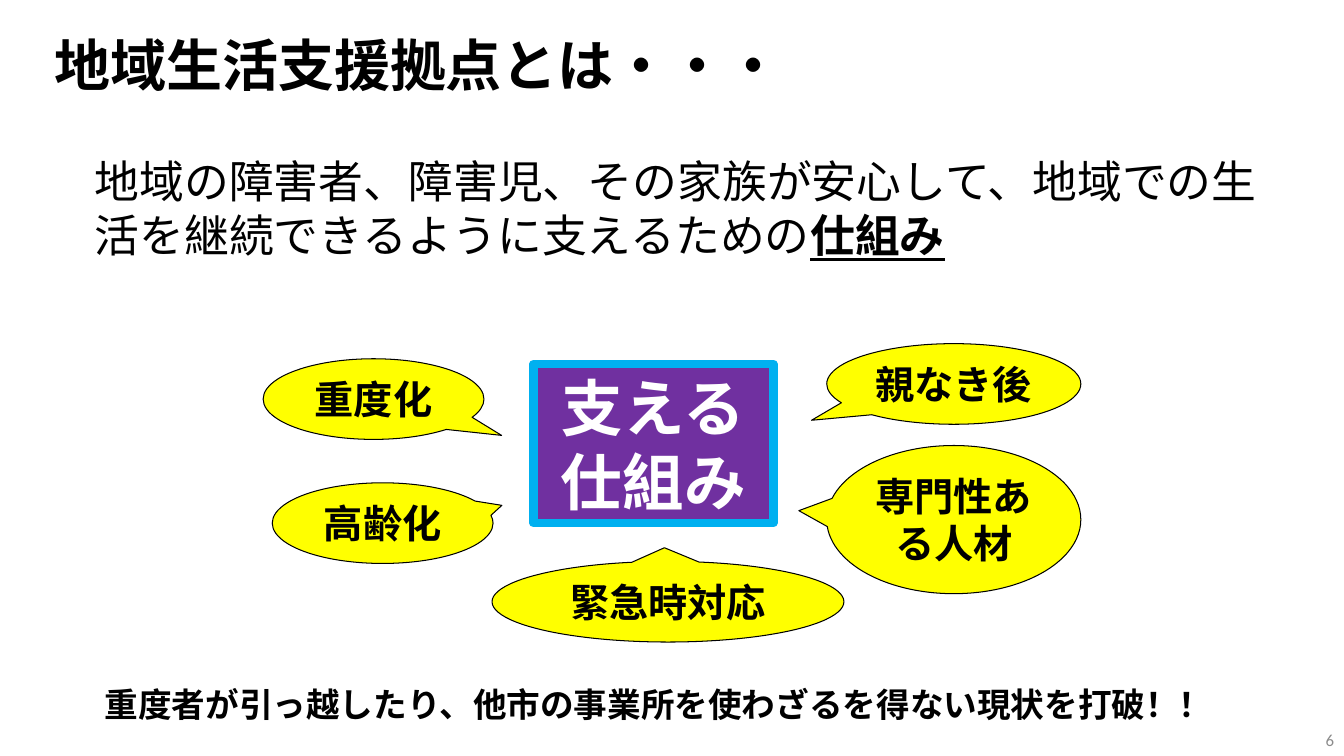
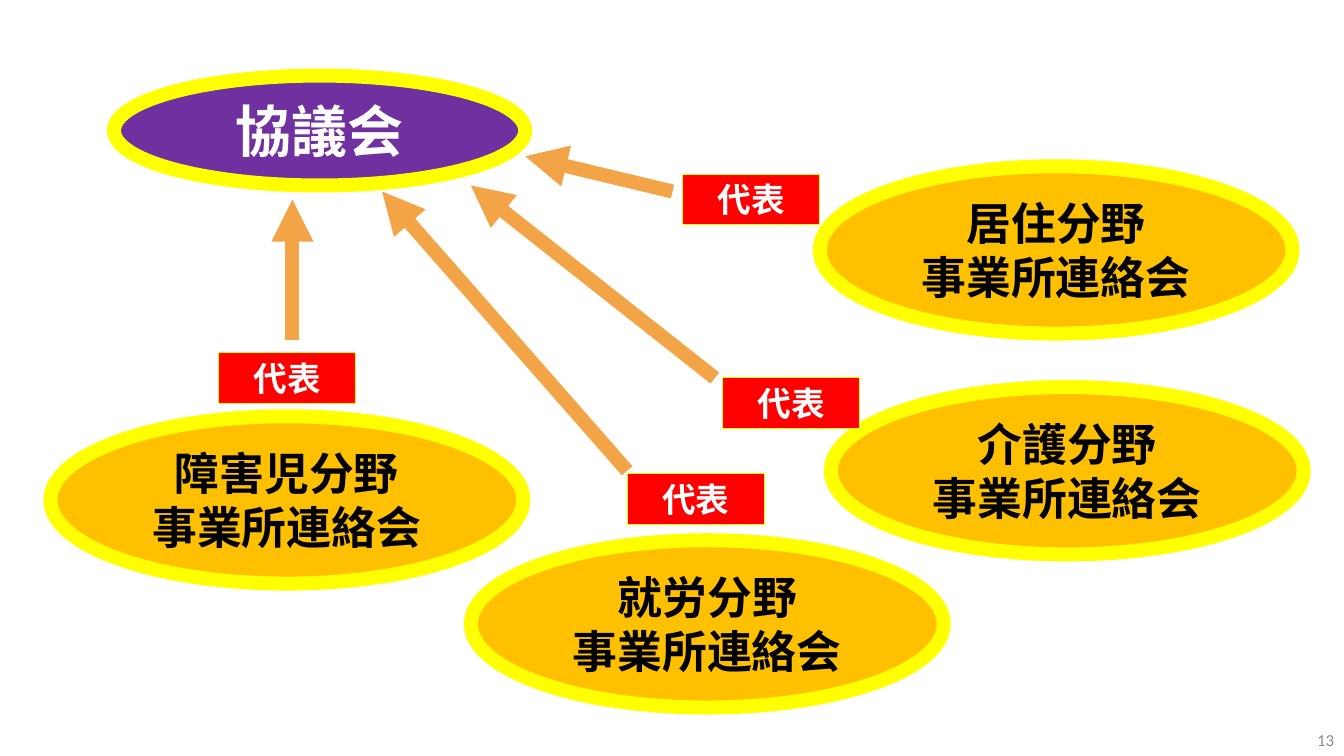
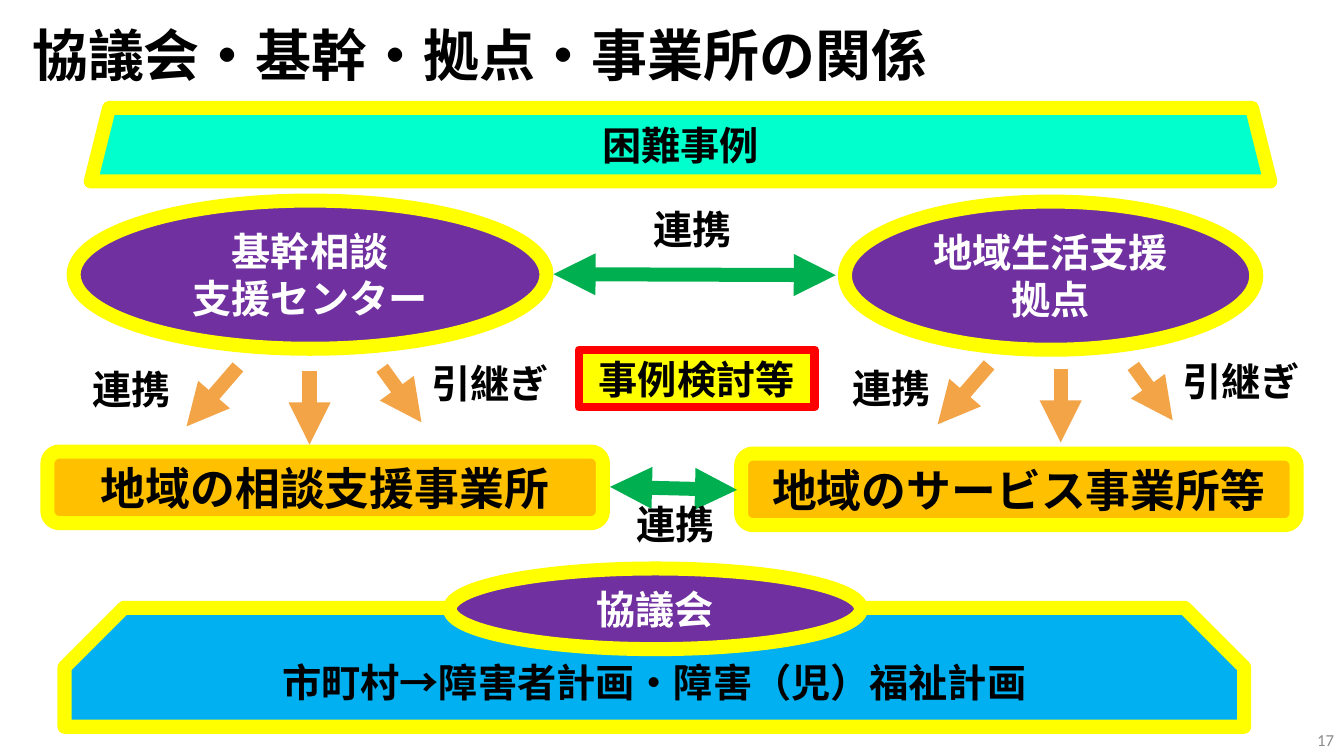
from dataclasses import dataclass
from typing import Optional

from lxml.etree import SubElement
from pptx import Presentation
from pptx.dml.color import RGBColor
from pptx.enum.shapes import MSO_CONNECTOR, MSO_SHAPE as Shape
from pptx.enum.text import MSO_ANCHOR as Anchor, PP_ALIGN as Align
from pptx.oxml.ns import qn
from pptx.util import Inches, Pt

BLACK = RGBColor(0x00, 0x00, 0x00)
WHITE = RGBColor(0xFF, 0xFF, 0xFF)
GREY = RGBColor(0x8C, 0x8C, 0x8C)
YELLOW = RGBColor(0xFF, 0xFF, 0x00)
AMBER = RGBColor(0xFF, 0xC0, 0x00)
ORANGE = RGBColor(0xF3, 0xA4, 0x47)
RED = RGBColor(0xFF, 0x00, 0x00)
PURPLE = RGBColor(0x70, 0x30, 0xA0)
BLUE = RGBColor(0x00, 0xB0, 0xF0)
AQUA = RGBColor(0x00, 0xFF, 0xCC)
GREEN = RGBColor(0x00, 0xB0, 0x50)

FONT = "Noto Sans CJK JP"
NUMBER_FONT = "Calibri"
THICK = 10


@dataclass(frozen=True)
class Box:
    left: float
    top: float
    width: float
    height: float

    def lengths(self) -> tuple:
        return tuple(Inches(v) for v in (self.left, self.top, self.width, self.height))


@dataclass(frozen=True)
class Style:
    kind: Shape
    fill: RGBColor
    line: RGBColor
    line_width: float
    size: int
    color: RGBColor = BLACK
    adjustments: tuple = ()


@dataclass(frozen=True)
class Arrow:
    x1: float
    y1: float
    x2: float
    y2: float

    def moved(self, dx: float, dy: float) -> "Arrow":
        return Arrow(self.x1 + dx, self.y1 + dy, self.x2 + dx, self.y2 + dy)


@dataclass(frozen=True)
class Callout:
    text: str
    box: Box
    pointer: tuple


@dataclass(frozen=True)
class Field:
    """A liaison group, the badge of its delegate and the delegate's arrow."""
    name: str
    left: float
    top: float
    badge_left: float
    badge_top: float
    arrow: Arrow


HUB = Style(Shape.OVAL, PURPLE, YELLOW, THICK, 28, WHITE)
MAIN_HUB = Style(Shape.OVAL, PURPLE, YELLOW, THICK, 40, WHITE)
GROUP = Style(Shape.OVAL, AMBER, YELLOW, THICK, 32)
OFFICE = Style(Shape.ROUNDED_RECTANGLE, AMBER, YELLOW, THICK, 32)
BADGE = Style(Shape.RECTANGLE, RED, YELLOW, 0.75, 24, WHITE)
CORE = Style(Shape.RECTANGLE, PURPLE, BLUE, 6, 44, WHITE)
REVIEW = Style(Shape.RECTANGLE, YELLOW, RED, 6, 28)
CASES = Style(Shape.TRAPEZOID, AQUA, YELLOW, THICK, 28)
PLAN = Style(Shape.SNIP_2_SAME_RECTANGLE, BLUE, YELLOW, THICK, 28, adjustments=(0.5, 0))

CALLOUTS = (
    Callout("重度化", Box(2.61, 3.56, 2.19, 0.8), (0.58, 0.45)),
    Callout("高齢化", Box(2.7, 4.79, 2.19, 0.8), (0.54, -0.22)),
    Callout("親なき後", Box(8.2, 3.41, 2.52, 0.8), (-0.56, 0.45)),
    Callout("専門性ある人材", Box(8.2, 4.42, 2.52, 1.47), (-0.61, -0.06)),
    Callout("緊急時対応", Box(4.88, 5.57, 3.49, 0.8), (-0.01, -0.67)),
)

FIELDS = (
    Field("障害児分野", 0.5, 4.13, 2.17, 3.5, Arrow(2.9, 3.37, 2.9, 1.98)),
    Field("就労分野", 4.67, 5.36, 6.22, 4.7, Arrow(6.22, 4.67, 3.79, 1.9)),
    Field("介護分野", 8.24, 3.84, 7.17, 3.75, Arrow(7.09, 3.75, 4.67, 1.84)),
    Field("居住分野", 8.13, 1.65, 6.77, 1.73, Arrow(6.67, 1.9, 5.21, 1.55)),
)

HANDOVER_ARROWS = (
    Arrow(2.36, 3.64, 1.85, 4.23),
    Arrow(3.07, 3.68, 3.07, 4.41),
    Arrow(3.79, 3.65, 4.18, 4.19),
)
HANDOVER_OFFSETS = ((0, 0), (7.45, -0.02))


def format_run(r, size: int, color: RGBColor, bold: bool, font: str = FONT) -> None:
    r.font.size = Pt(size)
    r.font.bold = bold
    r.font.color.rgb = color
    r.font.name = font
    SubElement(r._r.rPr, qn("a:ea")).set("typeface", font)


def write(s, text: str, size: int, color: RGBColor, bold: bool, align: Align,
          anchor: Anchor, font: str = FONT) -> None:
    tf = s.text_frame
    tf.word_wrap = True
    tf.vertical_anchor = anchor
    tf.text = text
    for p in tf.paragraphs:
        p.alignment = align
        for r in p.runs:
            format_run(r, size, color, bold, font)


def add_label(slide, text: str, box: Box, size: int = 28, bold: bool = True):
    s = slide.shapes.add_textbox(*box.lengths())
    write(s, text, size, BLACK, bold, Align.LEFT, Anchor.TOP)
    return s


def add_node(slide, text: str, box: Box, style: Style) -> None:
    s = slide.shapes.add_shape(style.kind, *box.lengths())
    s.shadow.inherit = False
    for i, value in enumerate(style.adjustments):
        s.adjustments[i] = value
    s.fill.solid()
    s.fill.fore_color.rgb = style.fill
    s.line.color.rgb = style.line
    s.line.width = Pt(style.line_width)
    write(s, text, style.size, style.color, True, Align.CENTER, Anchor.MIDDLE)


def add_arrow(slide, arrow: Arrow, color: RGBColor = ORANGE, both_ends: bool = False) -> None:
    ends = (Inches(v) for v in (arrow.x1, arrow.y1, arrow.x2, arrow.y2))
    s = slide.shapes.add_connector(MSO_CONNECTOR.STRAIGHT, *ends)
    s.line.color.rgb = color
    s.line.width = Pt(THICK)
    ln = s.line._get_or_add_ln()
    for tag in ("a:headEnd", "a:tailEnd") if both_ends else ("a:tailEnd",):
        SubElement(ln, qn(tag)).set("type", "triangle")
    SubElement(s._element.spPr, qn("a:effectLst"))


def new_slide(prs, number: int, title: Optional[str] = None, title_box: Optional[Box] = None):
    """Add a blank slide with its page number and, if given, its title."""
    slide = prs.slides.add_slide(prs.slide_layouts[6])
    if title and title_box:
        add_label(slide, title, title_box, 40)
    s = slide.shapes.add_textbox(*Box(10.33, 7.14, 3, 0.4).lengths())
    write(s, str(number), 12, GREY, False, Align.RIGHT, Anchor.MIDDLE, NUMBER_FONT)
    return slide


def build_definition(prs) -> None:
    slide = new_slide(prs, 6, "地域生活支援拠点とは・・・", Box(0.44, 0.25, 8.41, 0.77))
    s = add_label(
        slide,
        "地域の障害者、障害児、その家族が安心して、地域での生活を継続できるように支えるための",
        Box(0.84, 1.48, 11.79, 1.18), 32, bold=False)
    r = s.text_frame.paragraphs[0].add_run()
    r.text = "仕組み"
    format_run(r, 32, BLACK, True)
    r.font.underline = True

    for c in CALLOUTS:
        add_node(slide, c.text, c.box,
                 Style(Shape.OVAL_CALLOUT, YELLOW, BLACK, 0.75, 28, adjustments=c.pointer))
    add_node(slide, "支える\n仕組み", Box(5.29, 3.61, 2.38, 1.58), CORE)
    add_label(slide, "重度者が引っ越したり、他市の事業所を使わざるを得ない現状を打破！！",
              Box(0.94, 6.74, 11.85, 0.5), 24)


def build_council(prs) -> None:
    slide = new_slide(prs, 13)
    for f in FIELDS:
        add_node(slide, f"{f.name}\n事業所連絡会", Box(f.left, f.top, 4.69, 1.66), GROUP)
    for f in FIELDS:
        add_node(slide, "代表", Box(f.badge_left, f.badge_top, 1.36, 0.5), BADGE)
    add_node(slide, "協議会", Box(1.13, 0.75, 4.08, 1.09), MAIN_HUB)
    for f in FIELDS:
        add_arrow(slide, f.arrow)


def build_relations(prs) -> None:
    slide = new_slide(prs, 17, "協議会・基幹・拠点・事業所の関係", Box(0.22, 0.15, 9.56, 0.77))
    for text, box, style in (
        ("市町村→障害者計画・障害（児）福祉計画", Box(0.64, 6.03, 11.7, 1.18), PLAN),
        ("協議会", Box(4.46, 5.64, 4.08, 0.8), HUB),
        ("地域生活支援拠点", Box(8.38, 2, 4.08, 1.47), HUB),
        ("基幹相談\n支援センター", Box(0.73, 1.99, 4.69, 1.47), HUB),
        ("困難事例", Box(0.9, 1.07, 11.7, 0.73), CASES),
        ("地域の相談支援事業所", Box(0.47, 4.48, 5.51, 0.71), OFFICE),
        ("地域のサービス事業所等", Box(7.35, 4.5, 5.51, 0.71), OFFICE),
        ("事例検討等", Box(5.74, 3.47, 2.34, 0.57), REVIEW),
    ):
        add_node(slide, text, box, style)

    for dx, dy in HANDOVER_OFFSETS:
        for arrow in HANDOVER_ARROWS:
            add_arrow(slide, arrow.moved(dx, dy))
    for arrow in (Arrow(5.49, 2.72, 8.29, 2.73), Arrow(6.05, 4.83, 7.31, 4.86)):
        add_arrow(slide, arrow, GREEN, both_ends=True)

    for text, left, top, width in (
        ("連携", 6.38, 1.99, 1.09),
        ("連携", 0.82, 3.58, 2.1),
        ("引継ぎ", 4.18, 3.52, 2.1),
        ("連携", 8.36, 3.57, 2.1),
        ("引継ぎ", 11.63, 3.5, 1.48),
        ("連携", 6.21, 4.91, 1.09),
    ):
        add_label(slide, text, Box(left, top, width, 0.57))


def main() -> None:
    prs = Presentation()
    prs.slide_width = Inches(13.33)
    prs.slide_height = Inches(7.5)
    build_definition(prs)
    build_council(prs)
    build_relations(prs)
    prs.save("out.pptx")


if __name__ == "__main__":
    main()
